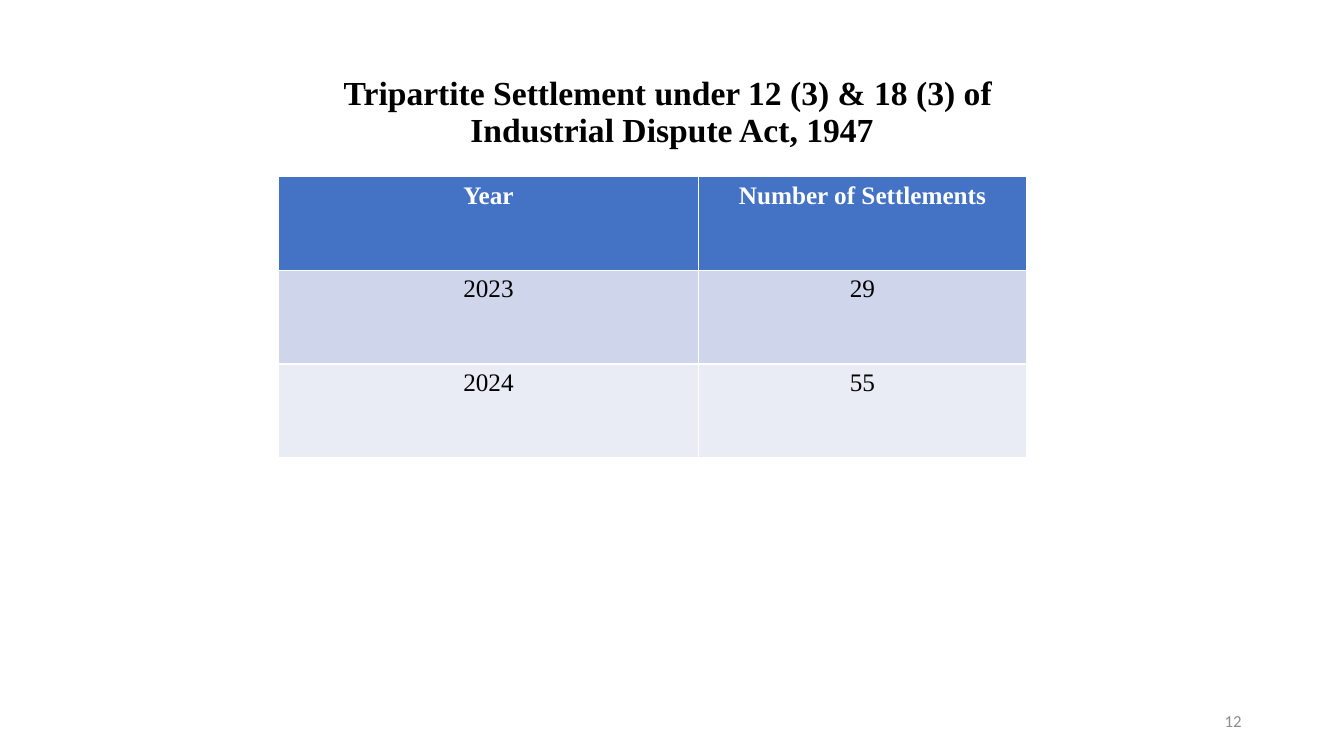
from pptx import Presentation
from pptx.dml.color import RGBColor
from pptx.enum.text import MSO_ANCHOR as Anchor, MSO_AUTO_SIZE as AutoSize, PP_ALIGN as Align
from pptx.util import Cm, Pt

TITLE = ["Tripartite Settlement under 12 (3) & 18 (3) of ", "Industrial Dispute Act, 1947"]
ROWS = [
    ("Year", "Number of Settlements"),
    ("2023", "29"),
    ("2024", "55"),
]
PAGE = "12"

BLACK = RGBColor(0x00, 0x00, 0x00)
WHITE = RGBColor(0xFF, 0xFF, 0xFF)
GREY = RGBColor(0x8C, 0x8C, 0x8C)
HEADER = RGBColor(0x44, 0x72, 0xC4)
BANDS = [RGBColor(0xE9, 0xEB, 0xF5), RGBColor(0xCF, 0xD5, 0xEA)]

COL_WIDTHS = [Cm(10.58), Cm(8.27)]
ROW_HEIGHT = Cm(2.36)


def write(tf, lines, size=18, font="Times New Roman", color=BLACK, bold=False,
          align=Align.CENTER, spacing=None):
    p = tf.paragraphs[0]
    p.alignment = align
    p.line_spacing = spacing
    for i, line in enumerate(lines):
        if i:
            p.add_line_break()
        r = p.add_run()
        r.text = line
        r.font.size = Pt(size)
        r.font.name = font
        r.font.bold = bold
        r.font.color.rgb = color


def add_title(s):
    sp = s.shapes.title
    sp.left, sp.top, sp.width, sp.height = Cm(2.33), Cm(1.01), Cm(29.21), Cm(3.68)
    tf = sp.text_frame
    tf.word_wrap = True
    tf.auto_size = AutoSize.NONE
    tf.vertical_anchor = Anchor.MIDDLE
    write(tf, TITLE, size=24, bold=True, spacing=0.9)


def add_settlements(s):
    table = s.shapes.add_table(len(ROWS), len(COL_WIDTHS), Cm(7.02), Cm(4.45),
                               sum(COL_WIDTHS), ROW_HEIGHT * len(ROWS)).table
    for col, width in zip(table.columns, COL_WIDTHS):
        col.width = width
    for i, values in enumerate(ROWS):
        table.rows[i].height = ROW_HEIGHT
        is_header = i == 0
        for j, value in enumerate(values):
            cell = table.cell(i, j)
            cell.fill.solid()
            cell.fill.fore_color.rgb = HEADER if is_header else BANDS[i % 2]
            write(cell.text_frame, [value], color=WHITE if is_header else BLACK, bold=is_header)


def add_page_number(s):
    tf = s.shapes.add_textbox(Cm(23.92), Cm(17.65), Cm(7.62), Cm(1.01)).text_frame
    tf.word_wrap = True
    tf.vertical_anchor = Anchor.MIDDLE
    write(tf, [PAGE], size=12, font="Calibri", color=GREY, align=Align.RIGHT)


def main():
    prs = Presentation()
    prs.slide_width, prs.slide_height = Cm(33.87), Cm(19.05)
    s = prs.slides.add_slide(prs.slide_layouts[5])
    add_title(s)
    add_settlements(s)
    add_page_number(s)
    prs.save("out.pptx")


if __name__ == "__main__":
    main()
